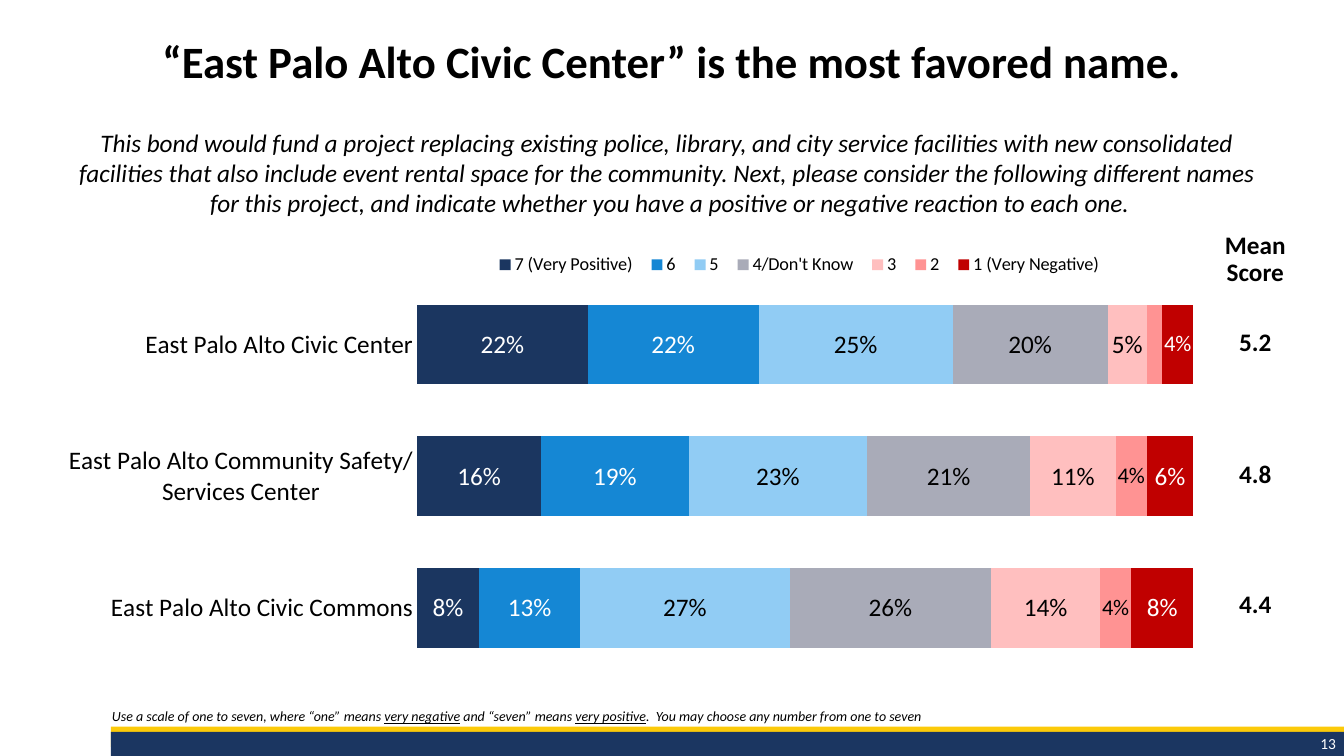
import dataclasses

import pptx
import pptx.chart.data
import pptx.dml.color
import pptx.enum.chart
import pptx.enum.shapes
import pptx.enum.text
import pptx.oxml
import pptx.util

WIDE, HIGH = 13.33, 7.5
ALIGN = pptx.enum.text.PP_ALIGN
ANCHOR = pptx.enum.text.MSO_ANCHOR


@dataclasses.dataclass(frozen=True)
class Theme:
    """Colours and type sizes of the slide."""
    font: str = "Calibri"
    ink: str = "000000"
    paper: str = "FFFFFF"
    navy: str = "1B3661"
    gold: str = "FCCA09"
    title: int = 32
    text: int = 18
    small_label: int = 16
    legend: int = 13
    page_number: int = 11
    note: int = 10


THEME = Theme()

CATEGORIES = [
    "East Palo Alto Civic Center",
    "East Palo Alto Community Safety/\nServices Center",
    "East Palo Alto Civic Commons",
]
RATINGS = [
    ("7 (Very Positive)", (0.22, 0.16, 0.08), "1B3660", THEME.paper, THEME.text),
    ("6", (0.22, 0.19, 0.13), "1587D4", THEME.paper, THEME.text),
    ("5", (0.25, 0.23, 0.27), "91CCF4", THEME.ink, THEME.text),
    ("4/Don't Know", (0.20, 0.21, 0.26), "A9ABB8", THEME.ink, THEME.text),
    ("3", (0.05, 0.11, 0.14), "FFBFBF", THEME.ink, THEME.text),
    ("2", (0.02, 0.04, 0.04), "FF9393", THEME.ink, THEME.small_label),
    ("1 (Very Negative)", (0.04, 0.06, 0.08), "C00000", THEME.paper, THEME.text),
]
SCORES = [("Mean\vScore", 0.53), ("5.2", 0.7), ("4.8", 1.31), ("4.4", 1.29)]


def inches(box):
    """Turn a box in inches into lengths."""
    return [pptx.util.Inches(length) for length in box]


def rgb(colour):
    """Return a colour object for a hex string."""
    return pptx.dml.color.RGBColor.from_string(colour)


def style(font, size, colour=THEME.ink, bold=False, italic=False):
    """Format a font with the theme's typeface."""
    font.name, font.size = THEME.font, pptx.util.Pt(size)
    font.bold, font.italic = bold, italic
    font.color.rgb = rgb(colour)


def place(shape, box):
    """Move a placeholder to a box."""
    shape.left, shape.top, shape.width, shape.height = inches(box)


def write(frame, text, align, anchor, size, **look):
    """Fill a text frame with one formatted paragraph."""
    frame.word_wrap = True
    frame.auto_size = pptx.enum.text.MSO_AUTO_SIZE.NONE
    frame.vertical_anchor = anchor
    frame.text = text
    para = frame.paragraphs[0]
    para.alignment = align
    para.space_before = pptx.util.Pt(0)
    for span in para.runs:
        style(span.font, size, **look)
    return para


def add_footer(page, box):
    """Draw the gold and navy band with the page number."""
    left, top, width, height = box
    bands = [(THEME.gold, top, 0.2), (THEME.navy, top + 0.05, height - 0.05)]
    for colour, band_top, band_height in bands:
        band = page.shapes.add_shape(
            pptx.enum.shapes.MSO_SHAPE.RECTANGLE,
            *inches((left, band_top, width, band_height)))
        band.shadow.inherit = False
        band.fill.solid()
        band.fill.fore_color.rgb = rgb(colour)
        band.line.fill.background()
    number = page.shapes.add_textbox(
        *inches((left + width - 1.95, top + 0.02, 1.97, height)))
    write(number.text_frame, "13", ALIGN.RIGHT, ANCHOR.MIDDLE,
          THEME.page_number, colour=THEME.paper)


def add_heading(page, box):
    """Place the title and the question beneath it."""
    left, top, width, height = box
    place(page.shapes.title, (left, top, width, 1.11))
    para = write(page.shapes.title.text_frame,
                 "“East Palo Alto Civic Center” is the most favored name.",
                 ALIGN.CENTER, ANCHOR.TOP, THEME.title, bold=True)
    para.line_spacing = 0.9
    question = page.shapes.add_textbox(
        *inches((left - 0.04, top + height - 1.01, width + 0.04, 1.01)))
    write(question.text_frame,
          "This bond would fund a project replacing existing police, library, "
          "and city service facilities with new consolidated \v"
          "facilities that also include event rental space for the community. "
          "Next, please consider the following different names \v"
          "for this project, and indicate whether you have a positive or "
          "negative reaction to each one.",
          ALIGN.CENTER, ANCHOR.TOP, THEME.text, italic=True)


def manual_layout(shares, inner=False):
    """Build a chart layout from shares of the chart's size."""
    target = '<c:layoutTarget val="inner"/>' if inner else ""
    modes = '<c:xMode val="edge"/><c:yMode val="edge"/>'
    sizes = "".join(f'<c:{key} val="{share}"/>' for key, share in zip("xywh", shares))
    return pptx.oxml.parse_xml(
        '<c:layout xmlns:c="http://schemas.openxmlformats.org/drawingml/2006/chart">'
        f"<c:manualLayout>{target}{modes}{sizes}</c:manualLayout></c:layout>")


def style_series(series, colour, label_colour, label_size):
    """Colour one rating and its labels, with narrow first bars treated apart."""
    series.format.fill.solid()
    series.format.fill.fore_color.rgb = rgb(colour)
    centre = pptx.enum.chart.XL_LABEL_POSITION.CENTER
    labels = series.data_labels
    labels.show_value = True
    labels.number_format, labels.number_format_is_linked = "0%", False
    labels.position = centre
    style(labels.font, label_size, label_colour)
    first = series.values[0]
    if first < 0.03:
        labels._element.insert(0, pptx.oxml.parse_xml(
            '<c:dLbl xmlns:c="http://schemas.openxmlformats.org/drawingml/2006/chart">'
            '<c:idx val="0"/><c:delete val="1"/></c:dLbl>'))
    elif first < 0.05:
        label = series.points[0].data_label
        style(label.font, THEME.small_label, label_colour)
        label.position = centre


def add_ratings(page, box):
    """Draw the stacked bars of ratings for each name."""
    data = pptx.chart.data.CategoryChartData(number_format="0%")
    data.categories = CATEGORIES
    for name, values, *_ in RATINGS:
        data.add_series(name, values)
    chart = page.shapes.add_chart(
        pptx.enum.chart.XL_CHART_TYPE.BAR_STACKED_100, *inches(box), data).chart
    style(chart.font, THEME.text)
    chart.has_title = False
    plot = chart.plots[0]
    plot.gap_width, plot.overlap, plot.vary_by_categories = 65, 100, False
    for series, (_, _, *look) in zip(plot.series, RATINGS):
        style_series(series, *look)

    names, shares = chart.category_axis, chart.value_axis
    names.reverse_order = True
    names.major_tick_mark = pptx.enum.chart.XL_TICK_MARK.NONE
    names.format.line.fill.background()
    style(names.tick_labels.font, THEME.text)
    shares.minimum_scale, shares.maximum_scale, shares.major_unit = 0, 1, 0.2
    shares.has_major_gridlines = False
    shares.visible = False

    chart.has_legend = True
    chart.legend.position = pptx.enum.chart.XL_LEGEND_POSITION.TOP
    chart.legend.include_in_layout = False
    style(chart.legend.font, THEME.legend)
    qn = pptx.oxml.ns.qn
    area = chart.element.find(".//" + qn("c:plotArea"))
    for layout in area.findall(qn("c:layout")):
        area.remove(layout)
    area.insert(0, manual_layout((0.32, 0.09, 0.67, 0.85), inner=True))
    legend = chart.element.find(".//" + qn("c:legend"))
    for layout in legend.findall(qn("c:layout")):
        legend.remove(layout)
    legend.find(qn("c:legendPos")).addnext(manual_layout((0.38, 0.03, 0.54, 0.06)))


def add_scores(page, box):
    """Place the column of mean scores beside the bars."""
    table = page.shapes.add_table(len(SCORES), 1, *inches(box)).table
    table.first_row = table.horz_banding = False
    for index, (score, height) in enumerate(SCORES):
        table.rows[index].height = pptx.util.Inches(height)
        cell = table.cell(index, 0)
        cell.fill.background()
        cell.margin_left = cell.margin_right = cell.margin_top = pptx.util.Inches(0.01)
        cell.margin_bottom = 0
        cell.vertical_anchor = ANCHOR.BOTTOM
        cell.text = score
        para = cell.text_frame.paragraphs[0]
        para.alignment = ALIGN.CENTER
        if index == 0:
            para.line_spacing = pptx.util.Pt(19)
        for span in para.runs:
            style(span.font, THEME.text, bold=True)


def add_note(page, box):
    """Fill the body placeholder with the note on the scale."""
    note = page.placeholders[1]
    place(note, box)
    para = write(note.text_frame, "", ALIGN.LEFT, ANCHOR.BOTTOM, THEME.note)
    para.line_spacing = 0.9
    properties = para._p.get_or_add_pPr()
    properties.set("marL", "0")
    properties.set("indent", "0")
    properties.append(pptx.oxml.parse_xml(
        '<a:buNone xmlns:a="http://schemas.openxmlformats.org/drawingml/2006/main"/>'))
    parts = ["Use a scale of one to seven, where “one” means ", "very negative",
             " and “seven” means ", "very positive",
             ".  You may choose any number from one to seven"]
    for index, part in enumerate(parts):
        span = para.add_run()
        span.text = part
        style(span.font, THEME.note, italic=True)
        span.font.underline = index % 2 == 1


def main():
    """Build and save the deck."""
    deck = pptx.Presentation()
    deck.slide_width, deck.slide_height = inches((WIDE, HIGH))
    page = deck.slides.add_slide(deck.slide_layouts[1])
    add_footer(page, (1.1, 7.21, WIDE - 1.1, 0.29))
    add_ratings(page, (0.46, 2.35, 11.49, 4.61))
    add_note(page, (1.01, 6.7, WIDE - 1.01, 0.54))
    add_scores(page, (12.06, 2.32, 0.78, 3.83))
    add_heading(page, (0.33, 0.34, 12.67, 1.88))
    deck.save("out.pptx")


if __name__ == "__main__":
    main()
